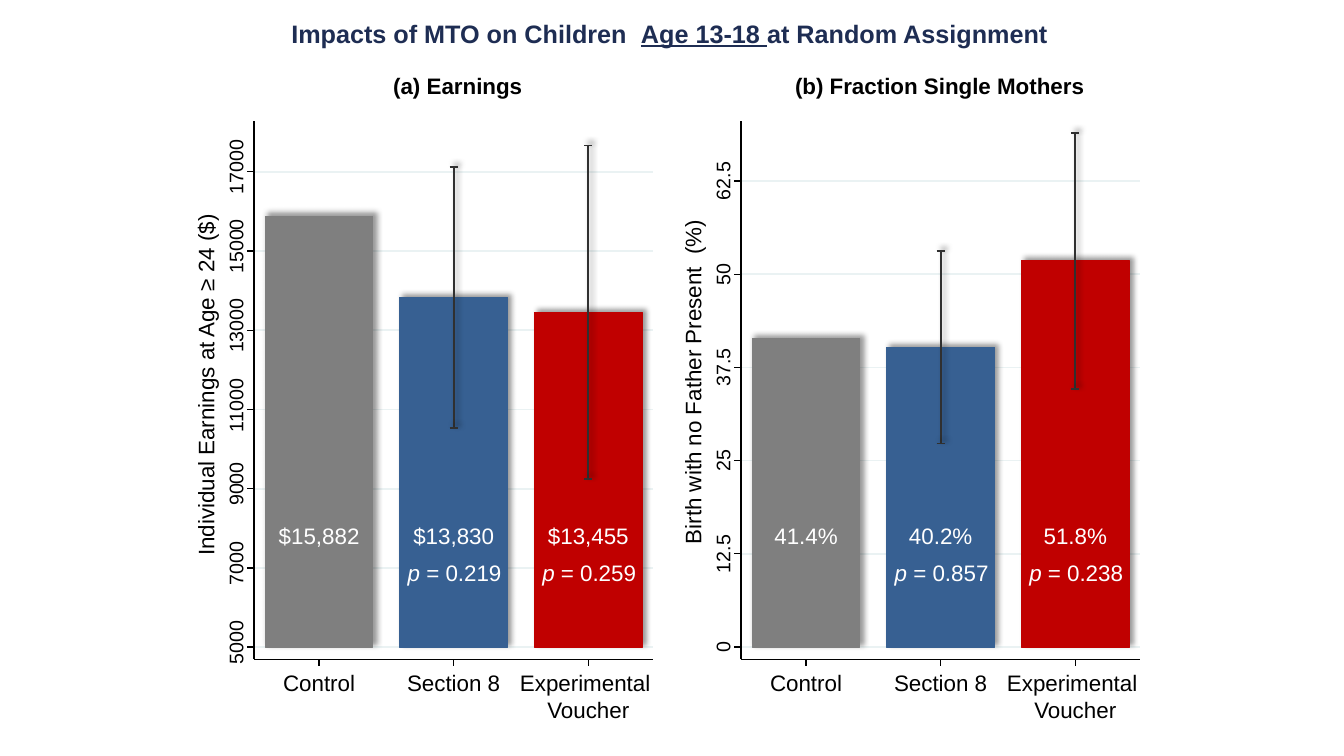
from lxml import etree
from pptx import Presentation
from pptx.dml.color import RGBColor
from pptx.enum import shapes, text
from pptx.oxml import ns
from pptx.util import Inches, Pt

NAVY = RGBColor(0x1E, 0x2D, 0x53)
BLACK = RGBColor(0, 0, 0)
WHITE = RGBColor(255, 255, 255)
GRID = RGBColor(0xEA, 0xF2, 0xF3)
WHISKER = RGBColor(0x30, 0x30, 0x30)
GROUP_COLORS = [RGBColor(0x7F, 0x7F, 0x7F), RGBColor(0x37, 0x60, 0x92), RGBColor(0xC0, 0, 0)]
FONT = "Arial"

# Content
TITLE = [("Impacts of MTO on Children  ", False), ("Age 13-18 ", True),
         ("at Random Assignment", False)]
GROUPS = [["Control"], ["Section 8"], ["Experimental ", "Voucher"]]
PANELS = [
    {"heading": "(a) Earnings", "heading_center": 4.54, "axis_x": 2.52,
     "axis_title": "Individual Earnings at Age ≥ 24 ($)", "axis_title_width": 3.43,
     "ticks": ["5000", "7000", "9000", "11000", "13000", "15000", "17000"],
     "tick_gap": 0.786, "tick_label_offset": (-0.18, -0.05),
     # value, half-width of the confidence interval, label, p-value
     "bars": [(15882, None, "$15,882", None),
              (13830, 3295, "$13,830", "0.219"),
              (13455, 4210, "$13,455", "0.259")]},
    {"heading": "(b) Fraction Single Mothers", "heading_center": 9.32, "axis_x": 7.35,
     "axis_title": " Birth with no Father Present  (%)", "axis_title_width": 3.32,
     "ticks": ["0", "12.5", "25", "37.5", "50", "62.5"],
     "tick_gap": 0.925, "tick_label_offset": (-0.18, 0),
     "bars": [(41.4, None, "41.4%", None),
              (40.2, 12.9, "40.2%", "0.857"),
              (51.8, 17.15, "51.8%", "0.238")]},
]

# Layout in inches, shared by both panels
AXIS_TOP, AXIS_BOTTOM, BASELINE = 1.2, 6.54, 6.42
AXIS_LENGTH, TICK, CAP = 3.96, 0.07, 0.04
BAR_WIDTH, BAR_PITCH, BAR_MARGIN = 1.07, 1.335, 0.11
VALUE_TOP, P_TOP, GROUP_TOP = 5.13, 5.5, 6.64


def set_shadow(shape, visible):
    """Give a shape a soft upper-right shadow, or none at all."""
    effects = etree.SubElement(shape._element.spPr, ns.qn("a:effectLst"))
    if visible:
        outer = etree.SubElement(effects, ns.qn("a:outerShdw"), blurRad="50800",
                                 dist="38100", dir="18900000", algn="bl", rotWithShape="0")
        black = etree.SubElement(outer, ns.qn("a:srgbClr"), val="000000")
        etree.SubElement(black, ns.qn("a:alpha"), val="40000")


def add_line(slide, x1, y1, x2, y2, color, width, shadow=False):
    line = slide.shapes.add_connector(shapes.MSO_CONNECTOR.STRAIGHT, Inches(x1), Inches(y1),
                                      Inches(x2), Inches(y2))
    line.line.color.rgb = color
    line.line.width = Pt(width)
    set_shadow(line, shadow)


def add_run(paragraph, words, size, color, bold=False, italic=False, underline=False):
    run = paragraph.add_run()
    run.text = words
    font = run.font
    font.name, font.size, font.color.rgb = FONT, Pt(size), color
    font.bold, font.italic, font.underline = bold, italic, underline


def add_text(slide, left, top, width, height, paragraphs, size=16, color=BLACK, bold=False,
             centered=True, inset=True, wrap=False, rotation=0):
    """Each paragraph is a list of (words, italic) runs."""
    box = slide.shapes.add_textbox(Inches(left), Inches(top), Inches(width), Inches(height))
    box.rotation = rotation
    frame = box.text_frame
    frame.word_wrap = wrap
    frame.auto_size = text.MSO_AUTO_SIZE.SHAPE_TO_FIT_TEXT
    if not inset:
        frame.margin_left = frame.margin_right = frame.margin_top = frame.margin_bottom = 0
    for i, runs in enumerate(paragraphs):
        paragraph = frame.add_paragraph() if i else frame.paragraphs[0]
        paragraph.alignment = text.PP_ALIGN.CENTER if centered else text.PP_ALIGN.LEFT
        for words, italic in runs:
            add_run(paragraph, words, size, color, bold, italic)


def add_vertical_text(slide, center_x, center_y, width, height, words, size):
    add_text(slide, center_x - width / 2, center_y - height / 2, width, height,
             [[(words, False)]], size, centered=False, inset=False, rotation=270)


def draw_title(slide):
    title = slide.shapes.title
    title.left, title.top, title.width, title.height = map(Inches, (1.64, 0.13, 10, 0.4))
    frame = title.text_frame
    frame.word_wrap = True
    frame.auto_size = text.MSO_AUTO_SIZE.NONE
    frame.vertical_anchor = text.MSO_ANCHOR.TOP
    paragraph = frame.paragraphs[0]
    paragraph.alignment = text.PP_ALIGN.CENTER
    for words, underline in TITLE:
        add_run(paragraph, words, 18, NAVY, bold=True, underline=underline)


def draw_panel(slide, panel):
    axis_x = panel["axis_x"]
    axis_end = axis_x + AXIS_LENGTH
    ticks = panel["ticks"]
    start, step = float(ticks[0]), float(ticks[1]) - float(ticks[0])

    def y_of(value):
        return BASELINE - (value - start) / step * panel["tick_gap"]

    add_text(slide, panel["heading_center"] - 1.55, 0.67, 3.1, 0.37,
             [[(panel["heading"], False)]], bold=True)

    # Gridlines
    for tick in ticks:
        y = y_of(float(tick))
        add_line(slide, axis_x, y, axis_end, y, GRID, 1.25)

    # Bars
    lefts = [axis_x + BAR_MARGIN + i * BAR_PITCH for i in range(len(GROUPS))]
    for left, color, (value, *_) in zip(lefts, GROUP_COLORS, panel["bars"]):
        top = y_of(value)
        bar = slide.shapes.add_shape(shapes.MSO_SHAPE.RECTANGLE, Inches(left), Inches(top),
                                     Inches(BAR_WIDTH), Inches(BASELINE - top))
        bar.fill.solid()
        bar.fill.fore_color.rgb = bar.line.color.rgb = color
        bar.line.width = Pt(0)
        set_shadow(bar, True)

    # Confidence intervals
    for left, (value, margin, *_) in zip(lefts, panel["bars"]):
        if margin:
            x = left + BAR_WIDTH / 2
            low, high = y_of(value - margin), y_of(value + margin)
            add_line(slide, x, low, x, high, WHISKER, 1.25, shadow=True)
            for y in (high, low):
                add_line(slide, x - CAP, y, x + CAP, y, WHISKER, 1.25, shadow=True)

    # Vertical axis with ticks and labels
    add_line(slide, axis_x, AXIS_BOTTOM, axis_x, AXIS_TOP, BLACK, 0.88)
    dx, dy = panel["tick_label_offset"]
    for tick in ticks:
        y = y_of(float(tick))
        add_line(slide, axis_x, y, axis_x - TICK, y, BLACK, 0.88)
        width = sum(0.05 if char == "." else 0.11 for char in tick)
        add_vertical_text(slide, axis_x + dx, y + dy, width, 0.24, tick, 14)
    add_vertical_text(slide, axis_x - 0.48, 3.8, panel["axis_title_width"], 0.27,
                      panel["axis_title"], 16)

    # Horizontal axis, group names and bar labels
    add_line(slide, axis_x, AXIS_BOTTOM, axis_end, AXIS_BOTTOM, BLACK, 0.88)
    for left, group, (_, _, label, p_value) in zip(lefts, GROUPS, panel["bars"]):
        x = left + BAR_WIDTH / 2
        add_line(slide, x, AXIS_BOTTOM, x, AXIS_BOTTOM + TICK, BLACK, 0.88)
        add_text(slide, x - 0.68, GROUP_TOP, 1.36, 0.27 * len(group),
                 [[(words, False)] for words in group], inset=False)
        add_text(slide, left, VALUE_TOP, BAR_WIDTH, 0.37, [[(label, False)]],
                 color=WHITE, wrap=True)
        if p_value:
            add_text(slide, left - 0.02, P_TOP, 1.21, 0.37,
                     [[("p", True), (f" = {p_value}", False)]],
                     color=WHITE, centered=False, wrap=True)


def main():
    deck = Presentation()
    deck.slide_width, deck.slide_height = Inches(13.33), Inches(7.5)
    slide = deck.slides.add_slide(deck.slide_layouts[5])
    draw_title(slide)
    for panel in PANELS:
        draw_panel(slide, panel)
    deck.save("out.pptx")


if __name__ == "__main__":
    main()
